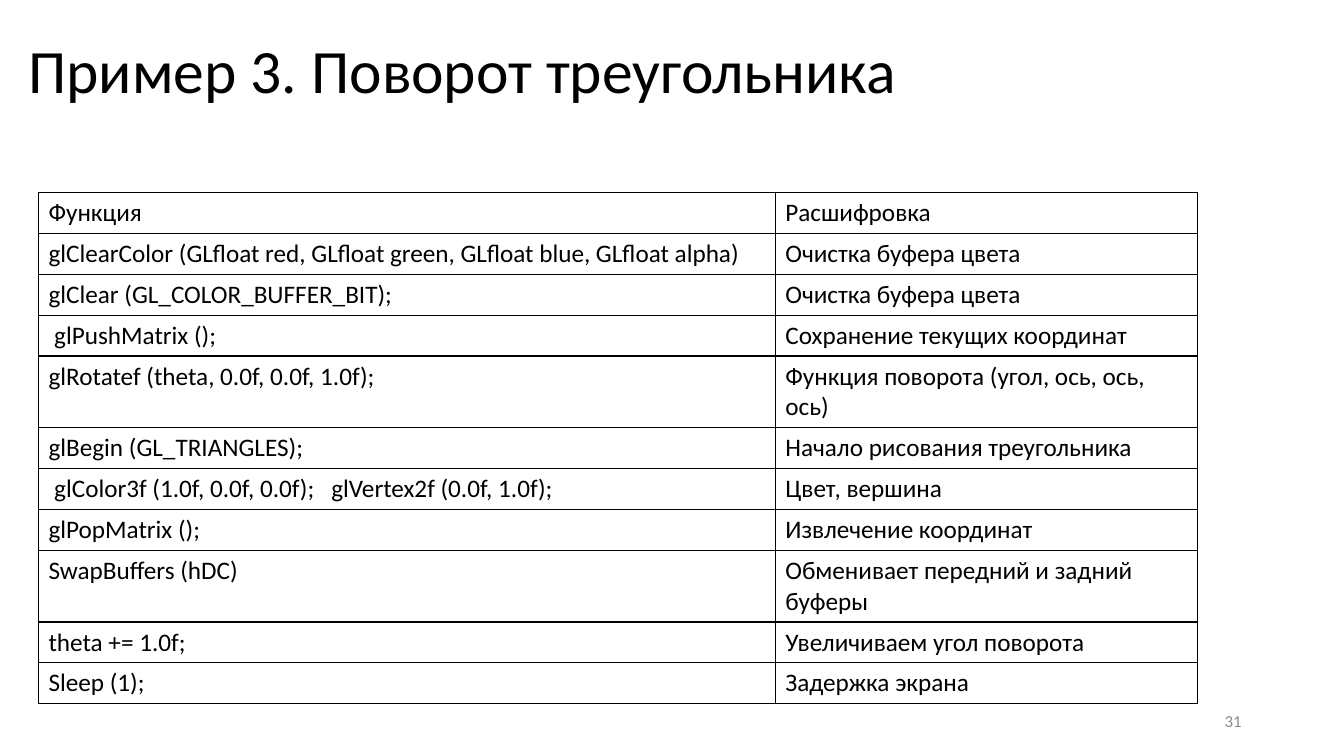
from dataclasses import dataclass

from lxml.etree import SubElement
from pptx import Presentation
from pptx.dml.color import RGBColor
from pptx.enum.text import MSO_ANCHOR, PP_ALIGN
from pptx.oxml.ns import qn
from pptx.util import Pt

# Content
TITLE = "Пример 3. Поворот треугольника"
PAGE_NUMBER = "31"
FUNCTIONS = [
    ("Функция", "Расшифровка"),
    ("glClearColor (GLfloat red, GLfloat green, GLfloat blue, GLfloat alpha)",
     "Очистка буфера цвета"),
    ("glClear (GL_COLOR_BUFFER_BIT);", "Очистка буфера цвета"),
    (" glPushMatrix ();", "Сохранение текущих координат"),
    ("glRotatef (theta, 0.0f, 0.0f, 1.0f);", "Функция поворота (угол, ось, ось, ось)"),
    ("glBegin (GL_TRIANGLES);", "Начало рисования треугольника"),
    (" glColor3f (1.0f, 0.0f, 0.0f);   glVertex2f (0.0f, 1.0f);", "Цвет, вершина"),
    ("glPopMatrix ();", "Извлечение координат"),
    ("SwapBuffers (hDC)", "Обменивает передний и задний буферы"),
    ("theta += 1.0f;", "Увеличиваем угол поворота"),
    ("Sleep (1);", "Задержка экрана"),
]


@dataclass(frozen=True)
class Theme:
    font: str = "Calibri"
    ink: str = "000000"
    muted: str = "8C8C8C"
    title_size: int = 44
    table_size: int = 18
    number_size: int = 12
    border_width: int = 1


THEME = Theme()
COLUMN_WIDTHS = (526.3, 301.7)
LINE_HEIGHT = 22
CELL_PADDING = 7.2
WRAP_LENGTH = 32  # characters that fit on one line of the second column


def style(paragraph, size, color):
    paragraph.font.name = THEME.font
    paragraph.font.size = Pt(size)
    paragraph.font.color.rgb = RGBColor.from_string(color)


def add_borders(cell):
    properties = cell._tc.get_or_add_tcPr()
    for side in ("L", "R", "T", "B"):
        border = SubElement(properties, qn(f"a:ln{side}"),
                            w=str(Pt(THEME.border_width)))
        fill = SubElement(border, qn("a:solidFill"))
        SubElement(fill, qn("a:srgbClr"), val=THEME.ink)


def add_title(slide):
    title = slide.shapes.title
    title.left, title.top, title.width, title.height = Pt(13), Pt(0), Pt(828), Pt(104.4)
    frame = title.text_frame
    frame.text = TITLE
    frame.word_wrap = True
    frame.vertical_anchor = MSO_ANCHOR.MIDDLE
    heading = frame.paragraphs[0]
    heading.alignment = PP_ALIGN.LEFT
    heading.line_spacing = 0.9
    style(heading, THEME.title_size, THEME.ink)


def add_function_table(slide):
    heights = [CELL_PADDING + LINE_HEIGHT * (2 if len(meaning) > WRAP_LENGTH else 1)
               for _, meaning in FUNCTIONS]
    table = slide.shapes.add_table(
        len(FUNCTIONS), len(COLUMN_WIDTHS), Pt(27.5), Pt(137.5),
        Pt(sum(COLUMN_WIDTHS)), Pt(sum(heights))).table
    table.first_row = False
    table.horz_banding = False
    for column, width in zip(table.columns, COLUMN_WIDTHS):
        column.width = Pt(width)
    for row, height, texts in zip(table.rows, heights, FUNCTIONS):
        row.height = Pt(height)
        for cell, text in zip(row.cells, texts):
            cell.text = text
            style(cell.text_frame.paragraphs[0], THEME.table_size, THEME.ink)
            add_borders(cell)
            cell.fill.background()


def add_page_number(slide):
    frame = slide.shapes.add_textbox(Pt(678), Pt(500.5), Pt(216), Pt(28.75)).text_frame
    frame.word_wrap = True
    frame.vertical_anchor = MSO_ANCHOR.MIDDLE
    number = frame.paragraphs[0]
    number.text = PAGE_NUMBER
    number.alignment = PP_ALIGN.RIGHT
    style(number, THEME.number_size, THEME.muted)


def main():
    presentation = Presentation()
    presentation.slide_width, presentation.slide_height = Pt(960), Pt(540)
    title_only = presentation.slide_layouts[5]
    slide = presentation.slides.add_slide(title_only)
    add_function_table(slide)
    add_page_number(slide)
    add_title(slide)
    presentation.save("out.pptx")


if __name__ == "__main__":
    main()
